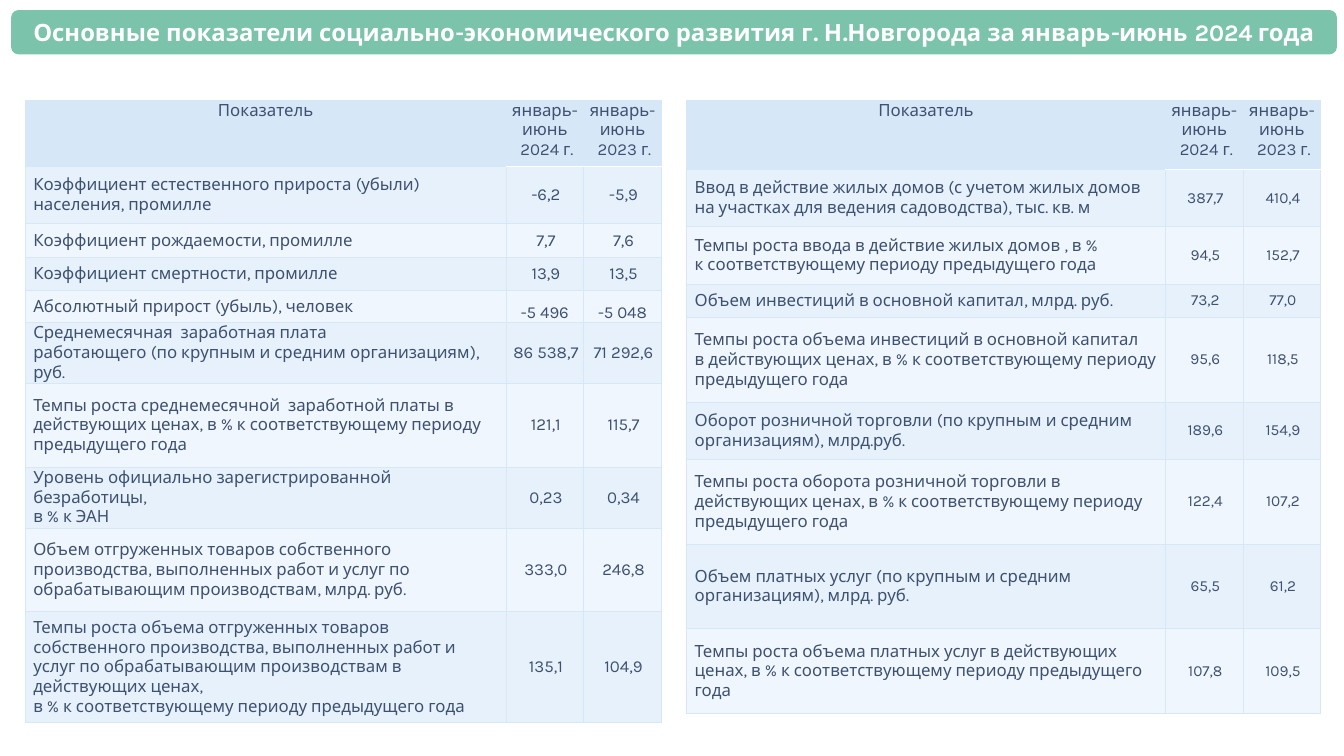
from dataclasses import dataclass

from lxml import etree
from pptx import Presentation
from pptx.dml.color import RGBColor
from pptx.enum import shapes, text
from pptx.oxml import ns
from pptx.util import Inches, Pt


@dataclass(frozen=True)
class Theme:
    font: str = "Karla"
    bar: str = "7BC3AA"
    white: str = "FFFFFF"
    ink: str = "3F5170"
    header: str = "D6E7F8"
    bands: tuple[str, str] = ("E6F1FB", "EFF6FD")
    title_size: float = 17
    body_size: float = 12
    small_size: float = 11
    grid_width: float = 0.5
    header_rule_width: float = 1


@dataclass(frozen=True)
class Indicator:
    height: float
    label: str
    current: str
    previous: str
    anchor: text.MSO_ANCHOR = text.MSO_ANCHOR.MIDDLE


@dataclass(frozen=True)
class Panel:
    left: float
    label_width: float
    header_height: float
    value_size: float
    indicators: tuple[Indicator, ...]


THEME = Theme()
TOP = 1
VALUE_WIDTH = 0.77
HEADINGS = ("Показатель", "январь-июнь\v 2024 г.", "январь-июнь\v 2023 г.")
HEADER_INSETS = (0.06, 0, 0.06, 0)
LABEL_INSETS = (0.08, 0.01, 0.08, 0.01)
VALUE_INSETS = (0.06, 0.01, 0.04, 0.01)
BOTTOM_INSETS = (0.01, 0.01, 0.01, 0)

PANELS = (
    Panel(0.25, 4.77, 0.65, THEME.body_size, (
        Indicator(0.57, "Коэффициент естественного прироста (убыли) населения, промилле", "-6,2", "-5,9"),
        Indicator(0.33, "Коэффициент рождаемости, промилле", "7,7", "7,6"),
        Indicator(0.33, "Коэффициент смертности, промилле", "13,9", "13,5"),
        Indicator(0.32, "Абсолютный прирост (убыль), человек", "-5 496", "-5 048", text.MSO_ANCHOR.BOTTOM),
        Indicator(0.57, "Среднемесячная  заработная плата \nработающего (по крупным и средним "
                  "организациям), руб.", "86 538,7", "71 292,6"),
        Indicator(0.83, "Темпы роста среднемесячной  заработной платы в действующих ценах, "
                  "в % к соответствующему периоду предыдущего года", "121,1", "115,7"),
        Indicator(0.57, "Уровень официально зарегистрированной безработицы, \nв % к ЭАН", "0,23", "0,34"),
        Indicator(0.83, "Объем отгруженных товаров собственного производства, выполненных работ "
                  "и услуг по обрабатывающим производствам, млрд. руб.", "333,0", "246,8"),
        Indicator(1.1, "Темпы роста объема отгруженных товаров собственного производства, "
                  "выполненных работ и услуг по обрабатывающим производствам в действующих ценах, "
                  "\nв % к соответствующему периоду предыдущего года", "135,1", "104,9"),
    )),
    Panel(6.81, 4.75, 0.68, THEME.small_size, (
        Indicator(0.57, "Ввод в действие жилых домов (с учетом жилых домов на участках "
                  "для ведения садоводства), тыс. кв. м", "387,7", "410,4"),
        Indicator(0.57, "Темпы роста ввода в действие жилых домов , в % "
                  "\nк соответствующему периоду предыдущего года", "94,5", "152,7"),
        Indicator(0.33, "Объем инвестиций в основной капитал, млрд. руб.", "73,2", "77,0"),
        Indicator(0.84, "Темпы роста объема инвестиций в основной капитал \nв действующих ценах, "
                  "в % к соответствующему периоду предыдущего года", "95,6", "118,5"),
        Indicator(0.57, "Оборот розничной торговли (по крупным и средним организациям), "
                  "млрд.руб.", "189,6", "154,9"),
        Indicator(0.84, "Темпы роста оборота розничной торговли в действующих ценах, "
                  "в % к соответствующему периоду предыдущего года", "122,4", "107,2"),
        Indicator(0.84, "Объем платных услуг (по крупным и средним организациям), млрд. руб.", "65,5", "61,2"),
        Indicator(0.84, "Темпы роста объема платных услуг в действующих ценах, "
                  "в % к соответствующему периоду предыдущего года", "107,8", "109,5"),
    )),
)


def color(value: str) -> RGBColor:
    return RGBColor.from_string(value)


def style_paragraph(para, size: float, ink: str, align, bold: bool = False) -> None:
    para.alignment = align
    para.font.name = THEME.font
    para.font.size = Pt(size)
    para.font.bold = bold
    para.font.color.rgb = color(ink)


def set_insets(holder, insets: tuple[float, ...]) -> None:
    holder.margin_left, holder.margin_top, holder.margin_right, holder.margin_bottom = map(Inches, insets)


def draw_borders(cell, white_edge: str = "") -> None:
    properties = cell._tc.get_or_add_tcPr()
    for index, edge in enumerate(("lnL", "lnR", "lnT", "lnB")):
        is_rule = edge == white_edge
        width = THEME.header_rule_width if is_rule else THEME.grid_width
        line = etree.Element(ns.qn(f"a:{edge}"), w=str(Pt(width)))
        fill = etree.SubElement(line, ns.qn("a:solidFill"))
        etree.SubElement(fill, ns.qn("a:srgbClr"), val=THEME.white if is_rule else THEME.header)
        properties.insert(index, line)


def fill_cell(cell, content: str, size: float, fill: str, insets: tuple[float, ...],
              anchor, align, white_edge: str = "") -> None:
    cell.fill.solid()
    cell.fill.fore_color.rgb = color(fill)
    cell.vertical_anchor = anchor
    set_insets(cell, insets)
    frame = cell.text_frame
    for index, part in enumerate(content.split("\v")):
        para = frame.add_paragraph() if index else frame.paragraphs[0]
        para.text = part
        style_paragraph(para, size, THEME.ink, align)
    draw_borders(cell, white_edge)


def draw_title(page, title: str) -> None:
    bar = page.shapes.add_shape(shapes.MSO_SHAPE.ROUNDED_RECTANGLE,
                                Inches(0.11), Inches(0.1), Inches(13.15), Inches(0.44))
    bar.shadow.inherit = False
    bar.fill.solid()
    bar.fill.fore_color.rgb = color(THEME.bar)
    bar.line.fill.background()
    frame = bar.text_frame
    frame.word_wrap = True
    frame.vertical_anchor = text.MSO_ANCHOR.MIDDLE
    set_insets(frame, (0.07,) * 4)
    para = frame.paragraphs[0]
    para.text = title
    style_paragraph(para, THEME.title_size, THEME.white, text.PP_ALIGN.CENTER, bold=True)


def draw_panel(page, panel: Panel) -> None:
    widths = (panel.label_width, VALUE_WIDTH, VALUE_WIDTH)
    heights = (panel.header_height, *(indicator.height for indicator in panel.indicators))
    table = page.shapes.add_table(len(heights), len(widths), Inches(panel.left), Inches(TOP),
                                  Inches(sum(widths)), Inches(sum(heights))).table
    table.first_row = False
    table.horz_banding = False
    for column, width in zip(table.columns, widths):
        column.width = Inches(width)
    for row, height in zip(table.rows, heights):
        row.height = Inches(height)

    middle, center = text.MSO_ANCHOR.MIDDLE, text.PP_ALIGN.CENTER
    for column, heading in enumerate(HEADINGS):
        fill_cell(table.cell(0, column), heading, THEME.body_size, THEME.header, HEADER_INSETS,
                  text.MSO_ANCHOR.TOP, center, "lnB" if column else "")
    for row, indicator in enumerate(panel.indicators, start=1):
        band = THEME.bands[(row - 1) % 2]
        insets = VALUE_INSETS if indicator.anchor == middle else BOTTOM_INSETS
        fill_cell(table.cell(row, 0), indicator.label, THEME.body_size, band, LABEL_INSETS,
                  middle, text.PP_ALIGN.LEFT)
        for column, value in enumerate((indicator.current, indicator.previous), start=1):
            fill_cell(table.cell(row, column), value, panel.value_size, band, insets,
                      indicator.anchor, center, "lnT" if row == 1 else "")


def main() -> None:
    deck = Presentation()
    deck.slide_width, deck.slide_height = Inches(13.33), Inches(7.5)
    page = deck.slides.add_slide(deck.slide_layouts[6])
    draw_title(page, "Основные показатели социально-экономического развития "
                     "г. Н.Новгорода за январь-июнь 2024 года")
    for panel in PANELS:
        draw_panel(page, panel)
    deck.save("out.pptx")


if __name__ == "__main__":
    main()
